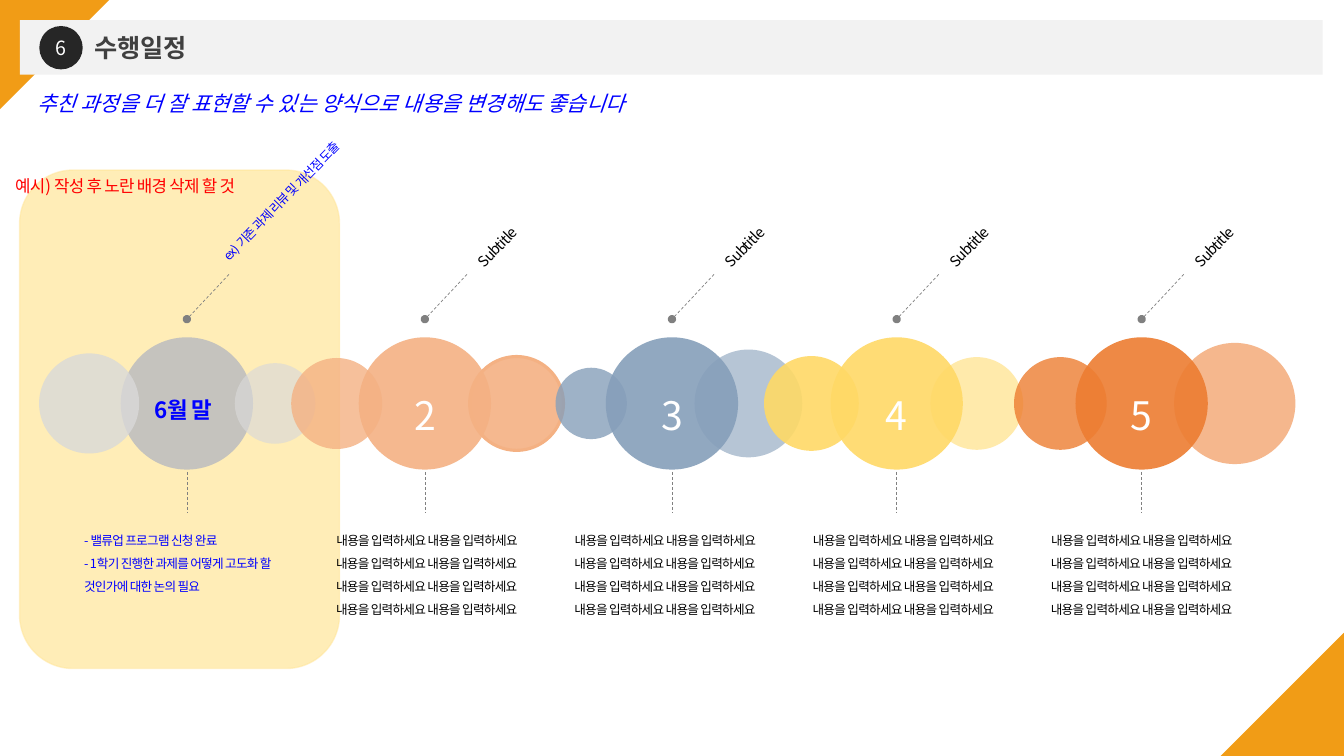
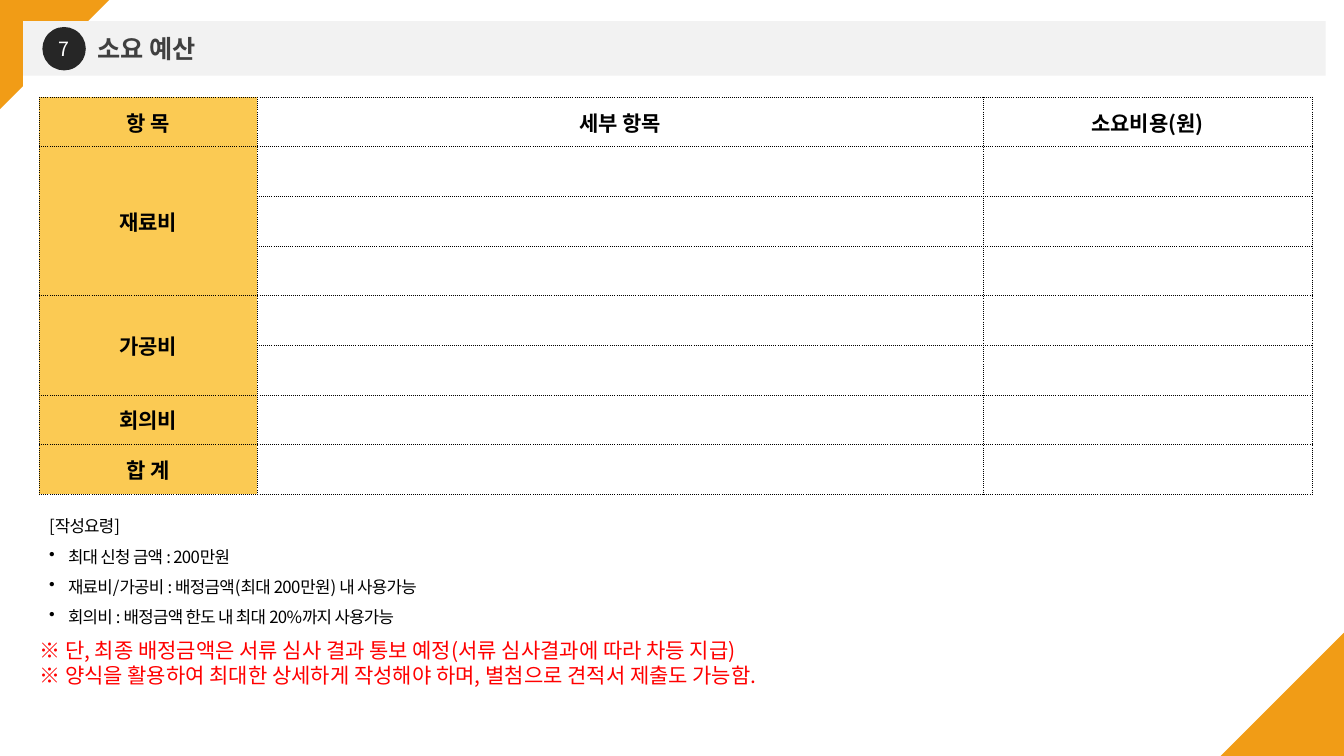
"""Build a project schedule slide and a budget slide."""
from pptx import Presentation
from pptx.dml.color import RGBColor
from pptx.enum.dml import MSO_LINE
from pptx.enum.shapes import MSO_CONNECTOR, MSO_SHAPE
from pptx.enum.text import MSO_ANCHOR, MSO_AUTO_SIZE, PP_ALIGN
from pptx.oxml.ns import qn
from pptx.util import Pt
from lxml.etree import SubElement

FONT = "Noto Sans CJK KR"
HEX = {
    "white": "FFFFFF", "black": "000000", "ink": "262626", "title": "404040",
    "band": "F2F2F2", "corner": "F19C16", "head": "FBCA53", "panel": "FFE699",
    "blue": "0000FF", "red": "FF0000", "line": "808080", "grey": "BFBFBF",
    "pale": "D9D9D9", "peach": "F4B183", "steel": "869FBA", "gold": "FFD966",
    "orange": "ED7D31",
}

HINT = "추친 과정을 더 잘 표현할 수 있는 양식으로 내용을 변경해도 좋습니다"
SAMPLE = "예시) 작성 후 노란 배경 삭제 할 것"
PAIR = "내용을 입력하세요 내용을 입력하세요"
BODY = [f"{PAIR} {PAIR}\v{PAIR}", PAIR]
FIRST = ["- 밸류업 프로그램 신청 완료",
         "- 1학기 진행한 과제를 어떻게 고도화 할 것인가에 대한 논의 필요"]
STEPS = [
    (133.5, "6월 말", "grey", "ex) 기존 과제 리뷰 및 개선점 도출", FIRST),
    (303.5, "2", "peach", "Subtitle", BODY),
    (480, "3", "steel", "Subtitle", BODY),
    (640.5, "4", "gold", "Subtitle", BODY),
    (815.5, "5", "orange", "Subtitle", BODY),
]
SIDES = [
    (63.7, 71.5, "pale", 80), (196.5, 57.6, "pale", 65),
    (240.5, 65, "peach", 80), (369, 67, "peach", 90),
    (422.3, 51, "steel", 80), (534.6, 77, "steel", 60),
    (579.6, 67.7, "gold", 90), (697.7, 66.2, "gold", 55),
    (757.4, 66.2, "orange", 80), (882, 86.6, "orange", 55),
]
HEADS = ["항 목", "세부 항목", "소요비용(원)"]
ITEMS = [("재료비", 3), ("가공비", 2), ("회의비", 1), ("합 계", 1)]
COLS = [155.5, 519, 234.5]
ROW = 35.45
GUIDE = ["[작성요령]", "최대 신청 금액 : 200만원",
         "재료비/가공비 : 배정금액(최대 200만원) 내 사용가능",
         "회의비 : 배정금액 한도 내 최대 20%까지 사용가능"]
NOTES = ["※ 단, 최종 배정금액은 서류 심사 결과 통보 예정(서류 심사결과에 따라 차등 지급)",
         "※ 양식을 활용하여 최대한 상세하게 작성해야 하며, 별첨으로 견적서 제출도 가능함."]
MID = 288.2
BIG = 94.5


def rgb(name):
    return RGBColor.from_string(HEX[name])


def write(frame, lines, size=9, color="black", bold=False, italic=False,
          align=PP_ALIGN.LEFT, space=None, track=0, dots=False):
    for i, line in enumerate(lines):
        para = frame.add_paragraph() if i else frame.paragraphs[0]
        para.text = line
        para.alignment = align
        if space:
            para.line_spacing = space
        if dots and i:
            props = para._p.get_or_add_pPr()
            props.set("marL", str(Pt(13.5)))
            props.set("indent", str(-Pt(13.5)))
            SubElement(props, qn("a:buChar")).set("char", "•")
        for run in para.runs:
            font = run.font
            font.name, font.size = FONT, Pt(size)
            font.bold, font.italic = bold, italic
            font.color.rgb = rgb(color)
            props = run._r.get_or_add_rPr()
            SubElement(props, qn("a:ea")).set("typeface", FONT)
            if track:
                props.set("spc", str(track))


def label(slide, box, lines, wrap=True, turn=0, **style):
    shape = slide.shapes.add_textbox(*map(Pt, box))
    shape.rotation = turn
    frame = shape.text_frame
    frame.word_wrap = wrap
    frame.auto_size = MSO_AUTO_SIZE.SHAPE_TO_FIT_TEXT
    write(frame, lines, **style)


def fade(fill, alpha):
    tone = fill.find(qn("a:solidFill")).find(qn("a:srgbClr"))
    SubElement(tone, qn("a:alpha")).set("val", str(alpha * 1000))


def block(slide, kind, box, color, alpha=100, turn=0):
    shape = slide.shapes.add_shape(kind, *map(Pt, box))
    shape.shadow.inherit = False
    shape.rotation = turn
    shape.fill.solid()
    shape.fill.fore_color.rgb = rgb(color)
    shape.line.fill.background()
    if alpha < 100:
        fade(shape.element.spPr, alpha)
    return shape


def edge(shape, color, width):
    shape.line.color.rgb = rgb(color)
    shape.line.width = Pt(width)


def disc(slide, x, size, color, alpha):
    box = (x - size / 2, MID - size / 2, size, size)
    return block(slide, MSO_SHAPE.OVAL, box, color, alpha)


def dash(slide, start, end, dot=False):
    line = slide.shapes.add_connector(MSO_CONNECTOR.STRAIGHT, *map(Pt, start + end))
    edge(line, "line", 0.5)
    line.line.dash_style = MSO_LINE.DASH
    if dot:
        SubElement(line.line._get_or_add_ln(), qn("a:headEnd")).set("type", "oval")
    SubElement(line.element.spPr, qn("a:effectLst"))


def header(slide, num, title, x, y, cover=False):
    block(slide, MSO_SHAPE.RIGHT_TRIANGLE, (0, -0.5, 78.5, 78.5), "corner", turn=90)
    block(slide, MSO_SHAPE.RIGHT_TRIANGLE, (872, 452, 88, 88), "corner", turn=270)
    if cover:
        block(slide, MSO_SHAPE.RECTANGLE, (x, y + 3.5, 855, 510.5), "white")
    block(slide, MSO_SHAPE.RECTANGLE, (x, y, 930.5, 39), "band")
    label(slide, (x + 46, y + 5, 434, 29), [title], size=18, color="title", bold=True)
    badge = block(slide, MSO_SHAPE.OVAL, (x + 13.8, y + 4.2, 31, 31), "ink")
    badge.text_frame.word_wrap = False
    badge.text_frame.vertical_anchor = MSO_ANCHOR.MIDDLE
    write(badge.text_frame, [num], size=14, color="white", align=PP_ALIGN.CENTER)


def plan(slide):
    panel = block(slide, MSO_SHAPE.ROUNDED_RECTANGLE, (14, 121.5, 228.5, 356), "panel", 70)
    edge(panel, "panel", 1)
    fade(panel.line._get_or_add_ln(), 50)
    header(slide, "6", "수행일정", 14.3, 14.4)

    main = [(x, BIG, color, 90) for x, _, color, _, _ in STEPS]
    for spot in main[:2] + main[3:] + SIDES + main[2:3]:
        shape = disc(slide, *spot)
        if spot == SIDES[3]:
            edge(shape, "peach", 2.25)

    tight = dict(space=1.5, track=-50)
    for i, (x, name, _, topic, body) in enumerate(STEPS):
        first = i == 0
        if first:
            box, look = (x - 38.5, 270, 72, 36), dict(size=16, color="blue", bold=True)
            tag, note = (x + 6, 124, 138, 40), dict(size=9, color="blue")
        else:
            box, look = (x - 22, 259, 44, 58), dict(size=28, color="white")
            tag, note = (x + 15.3, 137.5, 115, 26.5), dict(size=10.5)
        label(slide, box, [name], align=PP_ALIGN.CENTER, **look, **tight)
        label(slide, tag, [topic], turn=314.2, **note, **tight)
        label(slide, (53 + 170.2 * i, 372, 163, 73), body,
              color="blue" if first else "black",
              align=PP_ALIGN.LEFT if first else PP_ALIGN.CENTER, **tight)
        dash(slide, (x, 228), (x + 31, 195), dot=True)
        dash(slide, (x, 337), (x, 366))

    label(slide, (19.5, 61, 489, 25), [HINT], wrap=False, size=15, color="blue", italic=True)
    label(slide, (-10, 114.5, 199, 29), [SAMPLE], size=12, color="red",
          align=PP_ALIGN.CENTER, **tight)


def border(cell):
    props = cell._tc.get_or_add_tcPr()
    for i, side in enumerate(("lnL", "lnR", "lnT", "lnB")):
        line = props.makeelement(qn(f"a:{side}"), {"w": str(Pt(0.25))})
        fill = SubElement(line, qn("a:solidFill"))
        SubElement(fill, qn("a:srgbClr")).set("val", HEX["black"])
        SubElement(line, qn("a:prstDash")).set("val", "sysDot")
        props.insert(i, line)


def costs(slide):
    header(slide, "7", "소요 예산", 16.5, 15.1, cover=True)
    count = 1 + sum(span for _, span in ITEMS)
    box = (28, 69.3, sum(COLS), ROW * count)
    table = slide.shapes.add_table(count, len(COLS), *map(Pt, box)).table
    for col, width in zip(table.columns, COLS):
        col.width = Pt(width)
    for row in table.rows:
        row.height = Pt(ROW)
        for i, cell in enumerate(row.cells):
            if i:
                cell.fill.background()
            else:
                cell.fill.solid()
                cell.fill.fore_color.rgb = rgb("head")
            cell.vertical_anchor = MSO_ANCHOR.MIDDLE
            border(cell)

    words = [(0, i, head) for i, head in enumerate(HEADS)]
    top = 1
    for name, span in ITEMS:
        if span > 1:
            table.cell(top, 0).merge(table.cell(top + span - 1, 0))
        words.append((top, 0, name))
        top += span
    for row, col, word in words:
        write(table.cell(row, col).text_frame, [word], size=15, bold=True,
              align=PP_ALIGN.CENTER)

    label(slide, (21, 452, 591, 44), NOTES, wrap=False, size=15, color="red")
    label(slide, (28, 358, 445, 94), GUIDE, size=12, space=1.5, track=-50, dots=True)


def main():
    deck = Presentation()
    deck.slide_width, deck.slide_height = Pt(960), Pt(540)
    for draw in (plan, costs):
        draw(deck.slides.add_slide(deck.slide_layouts[6]))
    deck.save("out.pptx")


if __name__ == "__main__":
    main()
